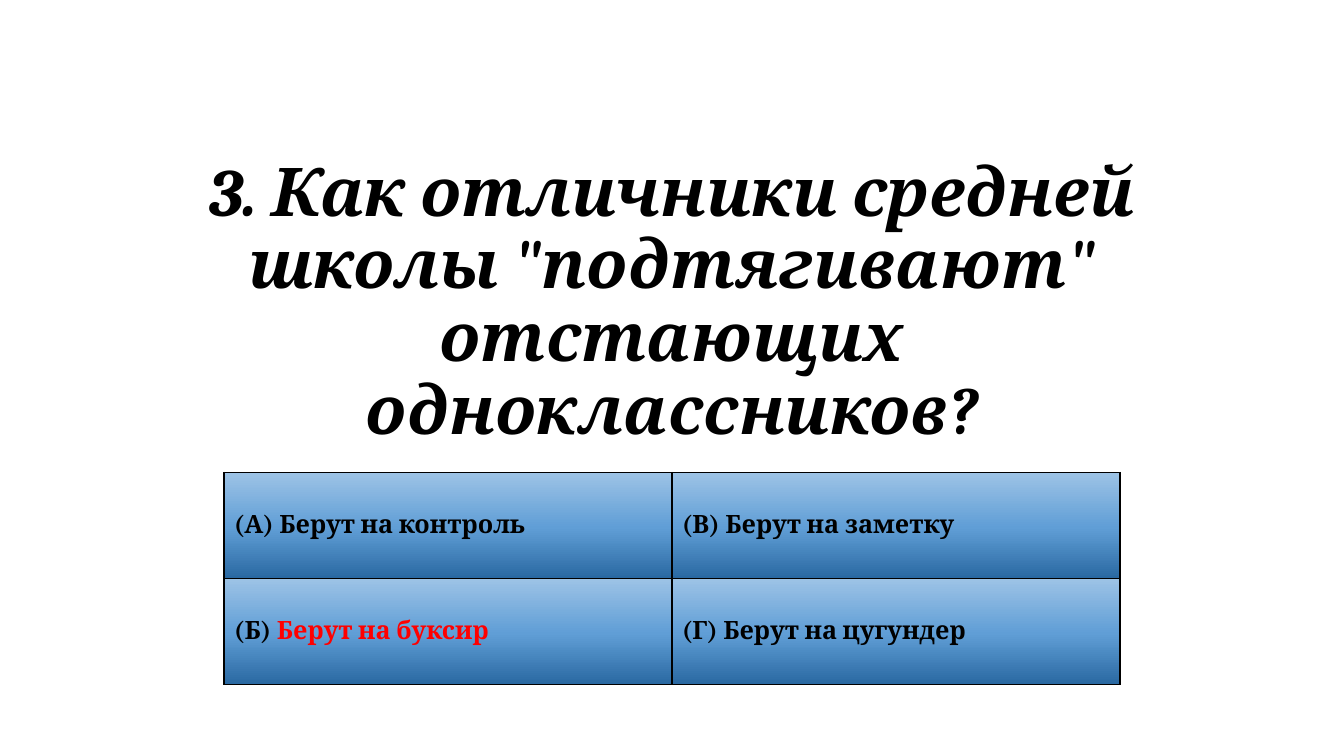
from lxml import etree
from pptx import Presentation, util as u
from pptx.dml.color import RGBColor
from pptx.enum import text
from pptx.oxml.ns import qn

W, H = 13.33, 7.5
BLACK, RED = "000000", "FF0000"
GRADIENT = [(0, "2A69A2"), (48, "609ED6"), (100, "9DC3E6")]
QUESTION = '3. Как отличники средней школы "подтягивают" отстающих одноклассников?'
ANSWERS = [
    [[("(А) Берут на контроль", BLACK)], [("(В) Берут на заметку", BLACK)]],
    [[("(Б) ", BLACK), ("Берут на буксир", RED)], [("(Г) Берут на цугундер", BLACK)]],
]


def color(value):
    return RGBColor.from_string(value)


def add_run(p, words, value, **formats):
    r = p.add_run()
    r.text = words
    r.font.color.rgb = color(value)
    for key, setting in {"name": "Cambria", "bold": True, **formats}.items():
        setattr(r.font, key, setting)


def add_child(parent, tag, **attrs):
    return etree.SubElement(parent, qn(tag), attrs)


def style_cell(cell):
    tc_pr = cell._tc.get_or_add_tcPr()
    for side in "LRTB":
        line = add_child(tc_pr, f"a:ln{side}", w=str(u.Pt(1)))
        add_child(add_child(line, "a:solidFill"), "a:srgbClr", val=BLACK)
    grad = add_child(tc_pr, "a:gradFill", rotWithShape="1")
    stops = add_child(grad, "a:gsLst")
    for share, value in GRADIENT:
        stop = add_child(stops, "a:gs", pos=str(share * 1000))
        add_child(stop, "a:srgbClr", val=value)
    add_child(grad, "a:lin", ang=str(270 * 60000), scaled="0")


def add_question(slide, x, y, w, h):
    tf = slide.shapes.add_textbox(*map(u.Inches, (x, y, w, h))).text_frame
    tf.word_wrap = True
    tf.vertical_anchor = text.MSO_ANCHOR.BOTTOM
    p = tf.paragraphs[0]
    p.alignment = text.PP_ALIGN.CENTER
    p.line_spacing = 0.9
    add_run(p, QUESTION, BLACK, size=u.Pt(48), italic=True)


def add_answers(slide, x, y, w, h):
    box = map(u.Inches, (x, y, w, h))
    table = slide.shapes.add_table(len(ANSWERS), len(ANSWERS[0]), *box).table
    table.first_row = table.horz_banding = False
    for i, row in enumerate(ANSWERS):
        for j, answer in enumerate(row):
            cell = table.cell(i, j)
            cell.vertical_anchor = text.MSO_ANCHOR.MIDDLE
            style_cell(cell)
            for words, value in answer:
                add_run(cell.text_frame.paragraphs[0], words, value, size=u.Pt(18))


def main():
    prs = Presentation()
    prs.slide_width, prs.slide_height = u.Inches(W), u.Inches(H)
    slide = prs.slides.add_slide(prs.slide_layouts[6])
    add_question(slide, W / 8, H * 0.275, W * 0.75, H * 0.325)
    add_answers(slide, W / 6, H * 0.625, W * 2 / 3, H * 0.28)
    prs.save("out.pptx")


if __name__ == "__main__":
    main()
